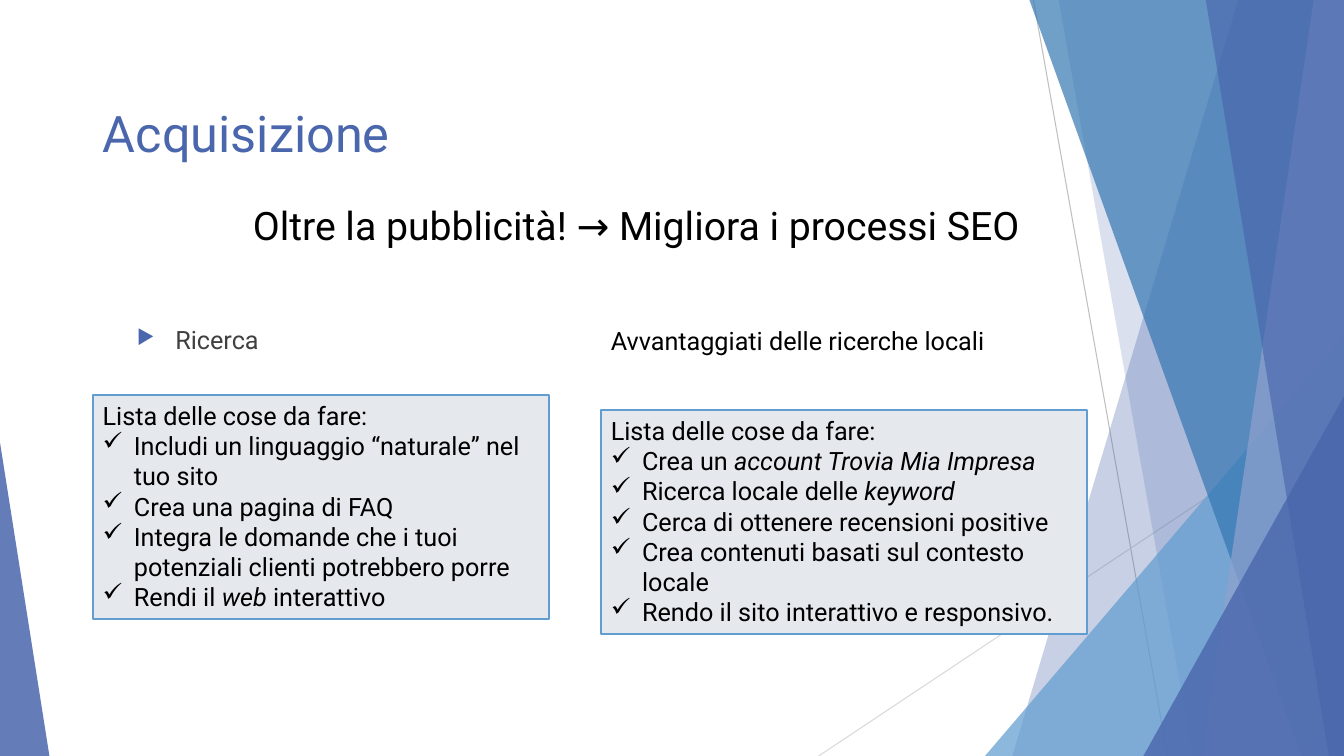
import pptx
import pptx.util
import pptx.dml.color
import pptx.enum.shapes
import pptx.enum.text
import pptx.oxml
import pptx.oxml.ns
from pptx.util import Inches

HEADING = "Acquisizione"
MESSAGE = "Oltre la pubblicità! → Migliora i processi SEO"
SEARCH_TOPIC = "Ricerca"
LOCAL_TOPIC = "Avvantaggiati delle ricerche locali"
TODO_INTRO = "Lista delle cose da fare:"
TODO_LISTS = [
    ((0.92, 3.92, 4.53, 2.22), [
        [("Includi un linguaggio “naturale” nel tuo sito", False)],
        [("Crea una pagina di FAQ", False)],
        [("Integra le domande che i tuoi potenziali clienti potrebbero porre", False)],
        [("Rendi il ", False), ("web", True), (" interattivo", False)],
    ]),
    ((5.96, 4.07, 4.82, 2.22), [
        [("Crea un ", False), ("account Trovia Mia Impresa", True)],
        [("Ricerca locale delle ", False), ("keyword", True)],
        [("Cerca di ottenere recensioni positive", False)],
        [("Crea contenuti basati sul contesto locale", False)],
        [("Rendo il sito interattivo e responsivo.", False)],
    ]),
]

THEME = {
    "font": "Roboto", "title_size": 36, "message_size": 28, "body_size": 18,
    "accent": "4A66AC", "sky": "629DD1", "ocean": "3477B2", "mist": "90A2CF",
    "panel": "E5E9EE", "ink": "000000", "muted": "404040",
    "ray_dark": "BFBFBF", "ray_light": "D9D9D9",
}
WIDTH, HEIGHT = 13.33, 7.5

RAYS = [((10.25, 0), (11.58, HEIGHT), "ray_dark"),
        ((WIDTH, 4.03), (8.12, HEIGHT), "ray_light")]


def facet(top, bottom):
    return [(top, 0), (WIDTH, 0), (WIDTH, HEIGHT), (bottom, HEIGHT)]


def right_wedge(left, top):
    return [(WIDTH, top), (WIDTH, HEIGHT), (left, HEIGHT)]


FACETS = [
    (facet(12.28, 10.04), "accent", 30),
    (facet(10.5, 11.83), "accent", 20),
    (right_wedge(9.77, 3.33), "sky", 72),
    (facet(10.21, 12.91), "ocean", 70),
    (facet(13.03, 11.92), "mist", 70),
    (facet(11.96, 13.18), "accent", 65),
    (right_wedge(11.34, 3.93), "accent", 80),
    ([(0, 4.39), (0.49, HEIGHT), (0, HEIGHT)], "accent", 85),
]

FRAME_FORMAT = {
    "word_wrap": True,
    "auto_size": pptx.enum.text.MSO_AUTO_SIZE.NONE,
    "vertical_anchor": pptx.enum.text.MSO_ANCHOR.TOP,
    "margin_left": Inches(0.1), "margin_right": Inches(0.1),
    "margin_top": Inches(0.05), "margin_bottom": Inches(0.05),
}


def colour(key):
    return pptx.dml.color.RGBColor.from_string(THEME[key])


def apply(target, values):
    for attribute, value in values.items():
        setattr(target, attribute, value)


def place(item, box):
    apply(item, dict(zip(("left", "top", "width", "height"), map(Inches, box))))


def add_child(parent, tag, **attributes):
    child = pptx.oxml.ns.qn(tag)
    element = parent.makeelement(child, attributes)
    parent.append(element)
    return element


def add_bullet(paragraph, mark, indent, key=None, percent=None):
    properties = paragraph._p.get_or_add_pPr()
    properties.set("marL", str(Inches(indent)))
    properties.set("indent", str(-Inches(indent)))
    if key:
        add_child(add_child(properties, "a:buClr"), "a:srgbClr", val=THEME[key])
    if percent:
        add_child(properties, "a:buSzPct", val=str(percent * 1000))
    add_child(properties, "a:buChar", char=mark)


def write(paragraph, runs, size="body_size", key="ink"):
    paragraph.alignment = pptx.enum.text.PP_ALIGN.LEFT
    for text, italic in runs:
        run = paragraph.add_run()
        run.text = text
        apply(run.font, {"name": THEME["font"], "italic": italic,
                         "size": pptx.util.Pt(THEME[size])})
        run.font.color.rgb = colour(key)


def add_label(slide, box, text, size="body_size", key="ink", bullet=None):
    label = slide.shapes.add_textbox(*map(Inches, box))
    apply(label.text_frame, FRAME_FORMAT)
    paragraph = label.text_frame.paragraphs[0]
    if bullet:
        add_bullet(paragraph, *bullet)
    write(paragraph, [(text, False)], size, key)
    return paragraph


def add_backdrop(slide):
    for start, end, key in RAYS:
        ray = slide.shapes.add_connector(
            pptx.enum.shapes.MSO_CONNECTOR.STRAIGHT, *map(Inches, start + end))
        ray.line.color.rgb = colour(key)
        ray.line.width = pptx.util.Pt(0.75)
        add_child(ray._element.spPr, "a:effectLst")
    for corners, key, opacity in FACETS:
        points = [tuple(map(Inches, corner)) for corner in corners]
        builder = slide.shapes.build_freeform(*points[0])
        builder.add_line_segments(points[1:], close=True)
        pane = builder.convert_to_shape()
        pane.shadow.inherit = False
        pane.fill.solid()
        pane.fill.fore_color.rgb = colour(key)
        pane.line.fill.background()
        tint = pane._element.spPr.find(".//" + pptx.oxml.ns.qn("a:srgbClr"))
        add_child(tint, "a:alpha", val=str(opacity * 1000))


def add_todo(slide, box, tasks):
    panel = slide.shapes.add_shape(
        pptx.enum.shapes.MSO_SHAPE.RECTANGLE, *map(Inches, box))
    panel.shadow.inherit = False
    panel.fill.solid()
    panel.fill.fore_color.rgb = colour("panel")
    panel.line.color.rgb = colour("sky")
    panel.line.width = pptx.util.Pt(1.5)
    apply(panel.text_frame, FRAME_FORMAT)
    write(panel.text_frame.paragraphs[0], [(TODO_INTRO, False)])
    for task in tasks:
        paragraph = panel.text_frame.add_paragraph()
        add_bullet(paragraph, "✓", 0.31)
        write(paragraph, task)


def main():
    deck = pptx.Presentation()
    apply(deck, {"slide_width": Inches(WIDTH), "slide_height": Inches(HEIGHT)})
    slide = deck.slides.add_slide(deck.slide_layouts.get_by_name("Title Only"))
    add_backdrop(slide)

    title = slide.shapes.title
    place(title, (0.92, 0.96, 10.74, 1.45))
    apply(title.text_frame, FRAME_FORMAT)
    write(title.text_frame.paragraphs[0], [(HEADING, False)], "title_size", "accent")

    add_label(slide, (2.41, 1.95, 8.92, 0.57), MESSAGE, "message_size")
    add_label(slide, (1.26, 3.17, 4.82, 0.68), SEARCH_TOPIC, key="muted",
              bullet=("▶", 0.38, "accent", 80))
    add_label(slide, (5.96, 3.21, 5.14, 0.68), LOCAL_TOPIC).line_spacing = 0.9
    for box, tasks in TODO_LISTS:
        add_todo(slide, box, tasks)
    deck.save("out.pptx")


if __name__ == "__main__":
    main()
